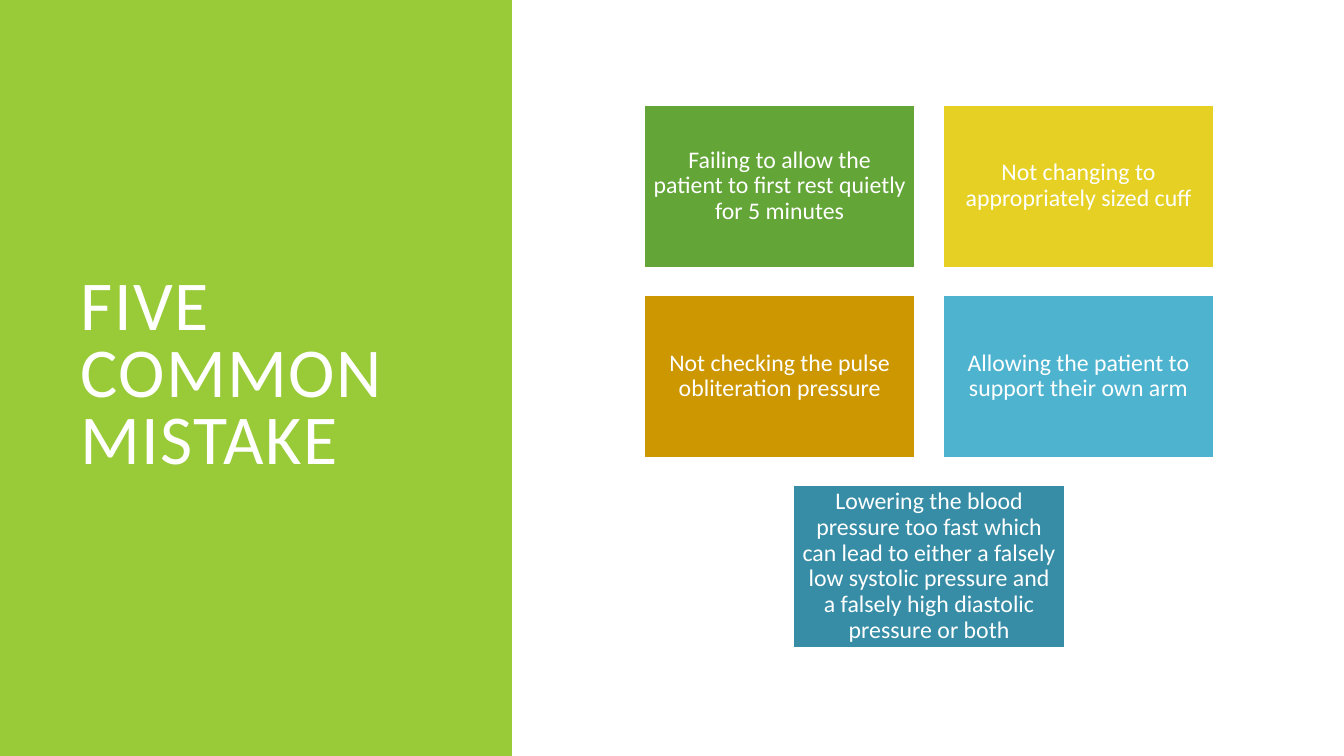
"""Build a slide listing five common mistakes in measuring blood pressure."""
from pptx import Presentation
from pptx.dml.color import RGBColor
from pptx.enum.shapes import MSO_SHAPE
from pptx.enum.text import MSO_ANCHOR, MSO_AUTO_SIZE, PP_ALIGN
from pptx.util import Cm, Pt

COLORS = {
    "white": "FFFFFF",
    "panel": "99CB38",
    "green": "63A537",
    "yellow": "E6D024",
    "ochre": "CC9700",
    "sky": "4EB3CF",
    "teal": "378DA6",
}
MISTAKES = [
    ("green", "Failing to allow the patient to first rest quietly for 5 minutes"),
    ("yellow", "Not changing to appropriately sized cuff"),
    ("ochre", "Not checking the pulse obliteration pressure"),
    ("sky", "Allowing the patient to support their own arm"),
    ("teal", "Lowering the blood pressure too fast which can lead to either a falsely "
             "low systolic pressure and a falsely high diastolic pressure or both"),
]
COLUMNS = 2
GRID_LEFT, GRID_TOP = 16.23, 2.64
CARD_WIDTH, CARD_HEIGHT, GAP = 6.84, 4.1, 0.69


def color(name):
    """Return the named colour."""
    return RGBColor.from_string(COLORS[name])


def apply_format(target, values):
    """Set every attribute in a dict of format values."""
    for name, value in values.items():
        setattr(target, name, value)


def write_text(shape, text, size, align, line_spacing, inset):
    """Write one middle-anchored white paragraph into a shape."""
    frame = shape.text_frame
    frame.text = text
    margins = {f"margin_{side}": Cm(inset) for side in ("left", "top", "right", "bottom")}
    apply_format(frame, {"word_wrap": True, "auto_size": MSO_AUTO_SIZE.NONE,
                         "vertical_anchor": MSO_ANCHOR.MIDDLE, **margins})
    para = frame.paragraphs[0]
    apply_format(para, {"alignment": align, "line_spacing": line_spacing})
    span = para.runs[0]
    apply_format(span.font, {"name": "Calibri", "size": Pt(size)})
    span.font.color.rgb = color("white")
    return span


def add_block(page, left, top, width, height, fill):
    """Add a flat filled rectangle."""
    block = page.shapes.add_shape(MSO_SHAPE.RECTANGLE, Cm(left), Cm(top), Cm(width), Cm(height))
    block.shadow.inherit = False
    block.fill.solid()
    block.fill.fore_color.rgb = color(fill)
    block.line.fill.background()
    return block


def add_panel(page):
    """Add the coloured side panel behind everything else."""
    panel = add_block(page, 0, 0, 12.9, 19.05, "panel")
    page.shapes.title.element.addprevious(panel.element)


def add_title(page, text):
    """Place and format the slide title."""
    title = page.shapes.title
    apply_format(title, {"left": Cm(1.78), "top": Cm(1.78),
                         "width": Cm(9.5), "height": Cm(15.47)})
    span = write_text(title, text, 50, PP_ALIGN.LEFT, 0.8, 0.25)
    span.font._element.set("spc", "100")


def add_card(page, left, top, fill, text):
    """Add one mistake card with a white outline."""
    card = add_block(page, left, top, CARD_WIDTH, CARD_HEIGHT, fill)
    card.line.color.rgb = color("white")
    card.line.width = Pt(1.25)
    write_text(card, text, 17, PP_ALIGN.CENTER, 0.9, 0.18)


def add_cards(page):
    """Lay the cards out in rows, centring a short last row."""
    for start in range(0, len(MISTAKES), COLUMNS):
        row = MISTAKES[start:start + COLUMNS]
        indent = (COLUMNS - len(row)) * (CARD_WIDTH + GAP) / 2
        top = GRID_TOP + start // COLUMNS * (CARD_HEIGHT + GAP)
        for column, (fill, text) in enumerate(row):
            left = GRID_LEFT + indent + column * (CARD_WIDTH + GAP)
            add_card(page, left, top, fill, text)


def main():
    """Build and save the deck."""
    deck = Presentation()
    apply_format(deck, {"slide_width": Cm(33.87), "slide_height": Cm(19.05)})
    page = deck.slides.add_slide(deck.slide_layouts[5])
    add_panel(page)
    add_title(page, "FIVE COMMON MISTAKE")
    add_cards(page)
    deck.save("out.pptx")


if __name__ == "__main__":
    main()
